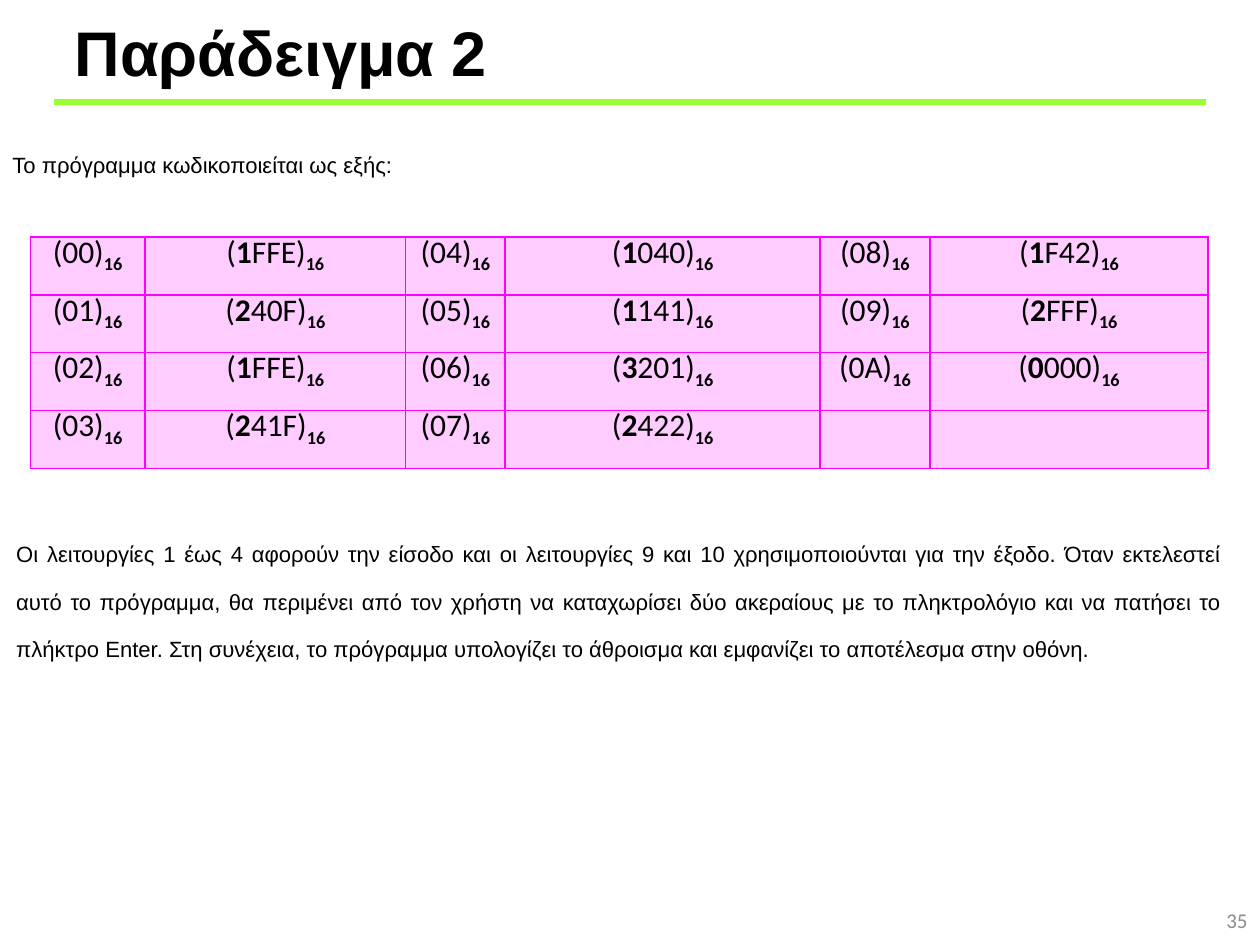
from lxml import etree
from pptx import Presentation
from pptx.dml.color import RGBColor
from pptx.enum import shapes, text
from pptx.oxml.ns import qn
from pptx.util import Inches, Pt


def color(value):
    return RGBColor.from_string(value)


def add_run(paragraph, words, **font_format):
    """Add a run; name, size, bold and the rest come from font_format."""
    run = paragraph.add_run()
    run.text = words
    run.font.color.rgb = color(font_format.pop("color", "000000"))
    for name, value in font_format.items():
        setattr(run.font, name, value)
    return run


presentation = Presentation()
presentation.slide_width = Inches(10)
presentation.slide_height = Inches(7.5)
slide = presentation.slides.add_slide(presentation.slide_layouts[6])

# Title, page number and body texts
ALIGN, ANCHOR = text.PP_ALIGN, text.MSO_ANCHOR
title_font = {"name": "Arial", "size": Pt(36), "bold": True}
number_font = {"name": "Calibri", "size": Pt(12), "color": "8C8C8C"}
body_font = {"name": "Arial", "size": Pt(12.6)}
explanation = (
    "Οι λειτουργίες 1 έως 4 αφορούν την είσοδο και οι λειτουργίες 9 και 10 "
    "χρησιμοποιούνται για την έξοδο. Όταν εκτελεστεί αυτό το πρόγραμμα, θα "
    "περιμένει από τον χρήστη να καταχωρίσει δύο ακεραίους με το πληκτρολόγιο "
    "και να πατήσει το πλήκτρο Enter. Στη συνέχεια, το πρόγραμμα υπολογίζει το "
    "άθροισμα και εμφανίζει το αποτέλεσμα στην οθόνη."
)
text_boxes = [
    ("Παράδειγμα 2", (0.32, 0, 3.82, 0.81), ALIGN.CENTER, ANCHOR.MIDDLE, 0.05, 1, title_font),
    ("35", (7.67, 7.1, 2.33, 0.4), ALIGN.RIGHT, ANCHOR.MIDDLE, 0.05, 1, number_font),
    ("Το πρόγραμμα κωδικοποιείται ως εξής:", (0, 1.1, 9.75, 0.47),
     ALIGN.JUSTIFY, ANCHOR.TOP, 0.1, 1, body_font),
    (explanation, (0.03, 4.02, 9.75, 2.32), ALIGN.JUSTIFY, ANCHOR.TOP, 0.1, 1.8, body_font),
]
for words, place, alignment, anchor, margin_top, line_spacing, font in text_boxes:
    box = slide.shapes.add_textbox(*map(Inches, place))
    if font is body_font:
        box.fill.solid()
        box.fill.fore_color.rgb = color("FFFFFF")
    frame = box.text_frame
    frame.word_wrap = True
    frame.vertical_anchor = anchor
    frame.margin_top = Inches(margin_top)
    paragraph = frame.paragraphs[0]
    paragraph.alignment = alignment
    paragraph.line_spacing = line_spacing
    add_run(paragraph, words, **font)

# Rule under the title
rule = slide.shapes.add_connector(
    shapes.MSO_CONNECTOR.STRAIGHT, Inches(0.43), Inches(0.81), Inches(9.57), Inches(0.81))
rule.line.color.rgb = color("99FF33")
rule.line.width = Pt(3)
etree.SubElement(rule._element.spPr, qn("a:effectLst"))

# Program table: pairs of address and instruction, read down the columns
instructions = ["1FFE", "240F", "1FFE", "241F", "1040", "1141",
                "3201", "2422", "1F42", "2FFF", "0000"]
addresses = [f"0{number}" for number in range(10)] + ["0Α"]
column_widths = [0.91, 2.07, 0.79, 2.5, 0.87, 2.21]
row_count = 4
table = slide.shapes.add_table(
    row_count, len(column_widths), Inches(0.24), Inches(1.88), Inches(9.34), Inches(1.83)).table
for column, width in zip(table.columns, column_widths):
    column.width = Inches(width)
for row in table.rows:
    row.height = Inches(0.46)

cell_format = {"vertical_anchor": ANCHOR.MIDDLE, "margin_left": Inches(0.07),
               "margin_right": Inches(0.07), "margin_top": 0, "margin_bottom": 0}
paragraph_format = {"alignment": ALIGN.CENTER, "line_spacing": Pt(11.4),
                    "space_before": Pt(1), "space_after": Pt(1)}
cell_font = {"name": "Calibri", "size": Pt(18)}
for row in range(row_count):
    for column in range(len(column_widths)):
        cell = table.cell(row, column)
        for name, value in cell_format.items():
            setattr(cell, name, value)
        properties = cell._tc.get_or_add_tcPr()
        for side in ("lnL", "lnR", "lnT", "lnB"):
            border = etree.SubElement(properties, qn(f"a:{side}"), w=str(Pt(1)))
            fill = etree.SubElement(border, qn("a:solidFill"))
            etree.SubElement(fill, qn("a:srgbClr"), val="FF00FF")
        cell.fill.solid()
        cell.fill.fore_color.rgb = color("FFCCFF")

        index = column // 2 * row_count + row
        if index >= len(instructions):
            continue
        paragraph = cell.text_frame.paragraphs[0]
        for name, value in paragraph_format.items():
            setattr(paragraph, name, value)
        if column % 2 == 0:
            add_run(paragraph, f"({addresses[index]})", **cell_font)
        else:
            operation, operand = instructions[index][0], instructions[index][1:]
            add_run(paragraph, "(", **cell_font)
            add_run(paragraph, operation, bold=True, **cell_font)
            add_run(paragraph, f"{operand})", **cell_font)
        base = add_run(paragraph, "16", bold=True, **cell_font)
        base.font._element.set("baseline", "-25000")

presentation.save("out.pptx")
